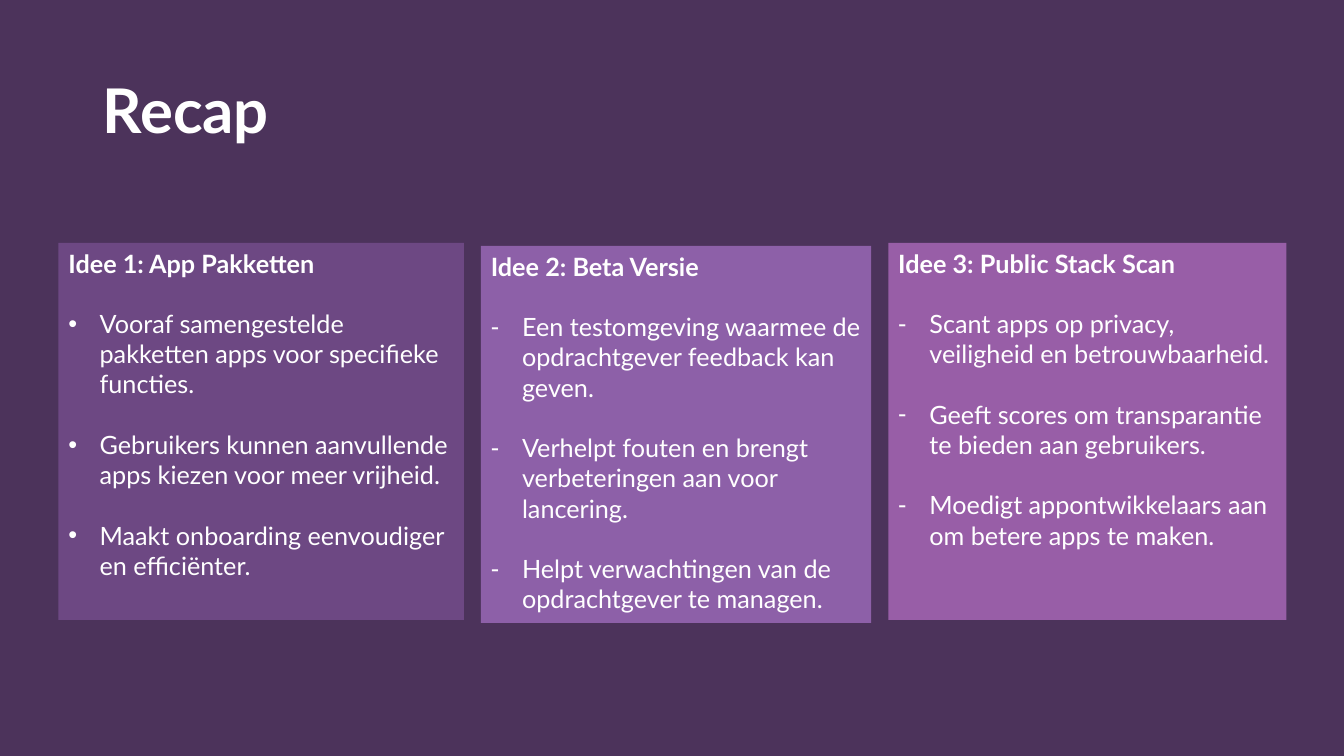
from lxml import etree
from pptx import Presentation
from pptx.dml.color import RGBColor
from pptx.enum import shapes, text
from pptx.oxml import ns
from pptx.util import Emu, Inches, Pt

FONT = "Lato"
WHITE = RGBColor(0xFF, 0xFF, 0xFF)
BACKGROUND = RGBColor(0x4C, 0x33, 0x5B)
PLUM = RGBColor(0x6D, 0x48, 0x83)
LAVENDER = RGBColor(0x8D, 0x60, 0xA8)
ORCHID = RGBColor(0x98, 0x5E, 0xA7)

CARD_HEIGHT = Inches(3.74)
BULLET_INDENT = Inches(0.31)
POINT_GAP = Pt(21.6)  # one full line of 18 pt Lato

# left, top, width, fill, bullet, heading, points
IDEAS = [
    (0.58, 2.41, 4.02, PLUM, "•", "Idee 1: App Pakketten", [
        "Vooraf samengestelde pakketten apps voor specifieke functies.",
        "Gebruikers kunnen aanvullende apps kiezen voor meer vrijheid.",
        "Maakt onboarding eenvoudiger en efficiënter.",
    ]),
    (4.77, 2.44, 3.87, LAVENDER, "-", "Idee 2: Beta Versie", [
        "Een testomgeving waarmee de opdrachtgever feedback kan geven.",
        "Verhelpt fouten en brengt verbeteringen aan voor lancering.",
        "Helpt verwachtingen van de opdrachtgever te managen.",
    ]),
    (8.81, 2.41, 3.95, ORCHID, "-", "Idee 3: Public Stack Scan", [
        "Scant apps op privacy, veiligheid en betrouwbaarheid.",
        "Geeft scores om transparantie te bieden aan gebruikers.",
        "Moedigt appontwikkelaars aan om betere apps te maken.",
    ]),
]


def add_run(paragraph, wording, size, bold=False):
    run = paragraph.add_run()
    run.text = wording
    run.font.name = FONT
    run.font.size = Pt(size)
    run.font.bold = bold
    run.font.color.rgb = WHITE


def set_bullet(paragraph, bullet):
    """Give the paragraph a hanging indent and a bullet character."""
    properties = paragraph._p.get_or_add_pPr()
    properties.set("marL", str(Emu(BULLET_INDENT)))
    properties.set("indent", str(-BULLET_INDENT))
    etree.SubElement(properties, ns.qn("a:buFont"), typeface="Arial")
    etree.SubElement(properties, ns.qn("a:buChar"), char=bullet)


def add_title(slide, wording):
    title = slide.shapes.add_textbox(Inches(0.92), Inches(0.4),
                                     Inches(11.5), Inches(1.45))
    frame = title.text_frame
    frame.word_wrap = True
    frame.vertical_anchor = text.MSO_ANCHOR.MIDDLE
    frame.paragraphs[0].line_spacing = 0.9
    add_run(frame.paragraphs[0], wording, 44, bold=True)


def add_idea_card(slide, left, top, width, fill, bullet, heading, points):
    card = slide.shapes.add_shape(shapes.MSO_SHAPE.RECTANGLE, Inches(left),
                                  Inches(top), Inches(width), CARD_HEIGHT)
    card.shadow.inherit = False
    card.fill.solid()
    card.fill.fore_color.rgb = fill
    card.line.fill.background()

    frame = card.text_frame
    frame.word_wrap = True
    frame.vertical_anchor = text.MSO_ANCHOR.TOP
    frame.paragraphs[0].alignment = text.PP_ALIGN.LEFT
    add_run(frame.paragraphs[0], heading, 18, bold=True)
    for point in points:
        paragraph = frame.add_paragraph()
        paragraph.alignment = text.PP_ALIGN.LEFT
        paragraph.space_before = POINT_GAP
        set_bullet(paragraph, bullet)
        add_run(paragraph, point, 18)


def main():
    deck = Presentation()
    deck.slide_width = Inches(13.33)
    deck.slide_height = Inches(7.5)
    slide = deck.slides.add_slide(deck.slide_layouts[6])
    slide.background.fill.solid()
    slide.background.fill.fore_color.rgb = BACKGROUND

    add_title(slide, "Recap")
    for idea in IDEAS:
        add_idea_card(slide, *idea)
    deck.save("out.pptx")


if __name__ == "__main__":
    main()
